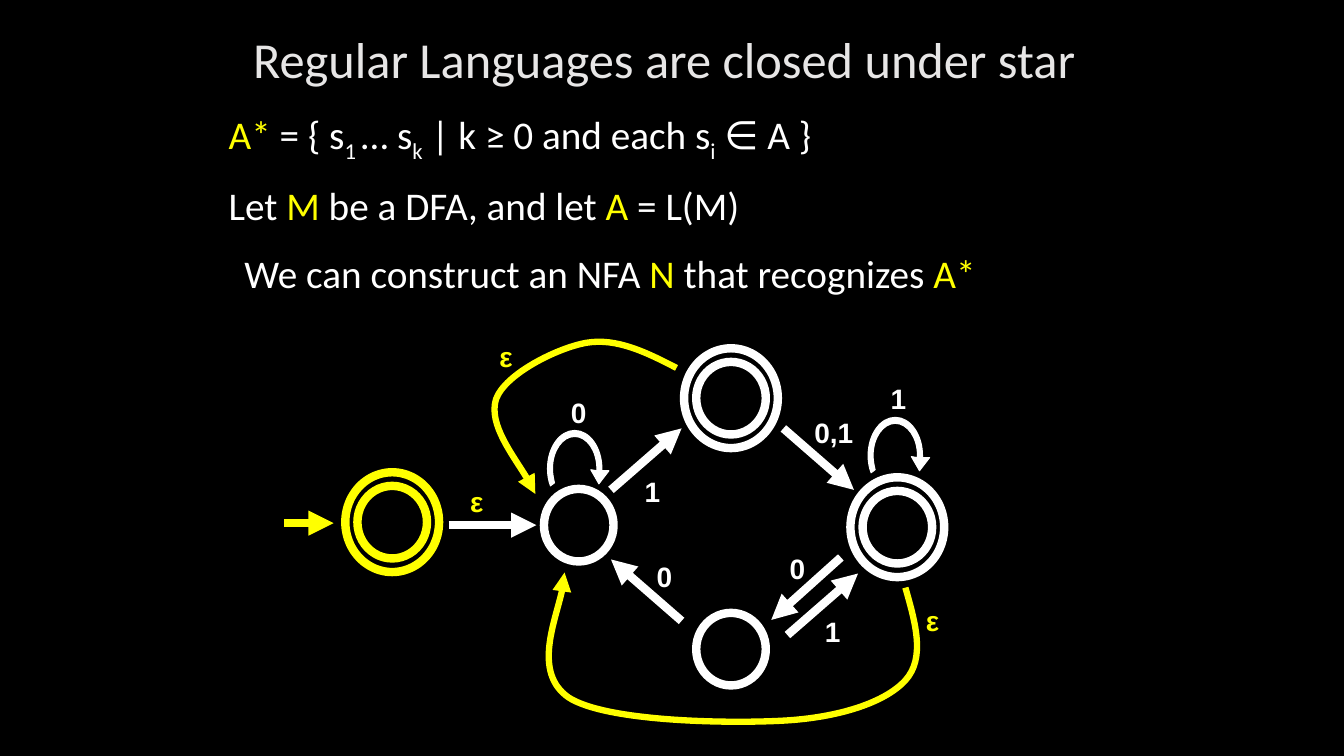
import pptx
import pptx.dml.color
import pptx.enum.shapes
import pptx.enum.text
import pptx.oxml
import pptx.oxml.ns
import pptx.util
from pptx.util import Inches

WHITE, YELLOW, TITLE_GRAY, BLACK = "FFFFFF", "FFFF00", "E7E6E6", "000000"
CENTER = pptx.enum.text.PP_ALIGN.CENTER
LEFT = pptx.enum.text.PP_ALIGN.LEFT


def rgb(color):
    return pptx.dml.color.RGBColor.from_string(color)


def drawing_element(tag, attributes=""):
    return pptx.oxml.parse_xml(
        f'<a:{tag} {pptx.oxml.ns.nsdecls("a")} {attributes}/>')


def style_line(shape, color, width, arrow=False):
    shape.line.color.rgb = rgb(color)
    shape.line.width = pptx.util.Pt(width)
    if arrow:
        shape.line._get_or_add_ln().append(
            drawing_element("tailEnd", 'type="triangle"'))


def add_text(slide, box, runs, size, font, align=LEFT, bold=False, wrap=True):
    """Runs are (text, color) or (text, color, baseline in percent)."""
    frame = slide.shapes.add_textbox(*map(Inches, box)).text_frame
    frame.word_wrap = wrap
    frame.auto_size = pptx.enum.text.MSO_AUTO_SIZE.SHAPE_TO_FIT_TEXT
    paragraph = frame.paragraphs[0]
    paragraph.alignment = align
    for text, color, *baseline in runs:
        run = paragraph.add_run()
        run.text = text
        run.font.size = pptx.util.Pt(size)
        run.font.name = font
        run.font.bold = bold
        run.font.color.rgb = rgb(color)
        if baseline:
            run.font._element.set("baseline", str(baseline[0] * 1000))


def add_edge(slide, start, end, color, arrow=True):
    edge = slide.shapes.add_connector(
        pptx.enum.shapes.MSO_CONNECTOR.STRAIGHT, *map(Inches, start + end))
    style_line(edge, color, 6, arrow)
    edge._element.spPr.append(drawing_element("effectLst"))


def add_ring(slide, center, width, height, color):
    x, y = center
    ring = slide.shapes.add_shape(
        pptx.enum.shapes.MSO_SHAPE.OVAL, Inches(x - width / 2),
        Inches(y - height / 2), Inches(width), Inches(height))
    ring.shadow.inherit = False
    ring.fill.background()
    style_line(ring, color, 6)


def add_state(slide, center, color, accepting):
    add_ring(slide, center, 0.69, 0.72, color)
    if accepting:
        add_ring(slide, center, 0.93, 0.99, color)


def add_outline(slide, left, top, start, segments, closed=False):
    """Each segment holds one point for a line, or three for a Bézier curve."""
    points = [start] + [point for segment in segments for point in segment]
    corners = [(Inches(left + x), Inches(top + y)) for x, y in points]
    builder = slide.shapes.build_freeform(*corners[0])
    builder.add_line_segments(corners[1:], close=closed)
    outline = builder.convert_to_shape()
    outline.shadow.inherit = False
    steps = iter(list(outline._element.iter(pptx.oxml.ns.qn("a:lnTo"))))
    for segment in segments:
        first, *others = [next(steps) for _ in segment]
        if others:
            curve = drawing_element("cubicBezTo")
            first.addprevious(curve)
            for step in (first, *others):
                curve.append(step[0])
                step.getparent().remove(step)
    return outline


def add_self_loop(slide, left, top):
    loop = add_outline(slide, left, top, (0.49, 0.4), [
        [(0.49, 0.39), (0.49, 0.38), (0.49, 0.38)],
        [(0.49, 0.2), (0.39, 0.06), (0.27, 0.06)],
        [(0.15, 0.06), (0.05, 0.2), (0.05, 0.38)],
        [(0.05, 0.43), (0.06, 0.48), (0.07, 0.52)],
        [(0.03, 0.55)],
        [(0.01, 0.5), (0, 0.44), (0, 0.38)],
        [(0, 0.17), (0.12, 0), (0.27, 0)],
        [(0.42, 0), (0.54, 0.17), (0.54, 0.38)],
        [(0.54, 0.38), (0.54, 0.39), (0.54, 0.4)],
        [(0.61, 0.4)], [(0.51, 0.53)], [(0.43, 0.39)], [(0.49, 0.4)],
    ], closed=True)
    loop.fill.solid()
    loop.fill.fore_color.rgb = rgb(WHITE)
    style_line(loop, WHITE, 0.75)


def add_epsilon_return(slide, left, top, start, segments):
    curve = add_outline(slide, left, top, start, segments)
    curve.fill.background()
    style_line(curve, YELLOW, 4.5, arrow=True)


def add_statements(slide, left, top, width):
    add_text(slide, (left, top, width, 0.71),
             [("Regular Languages are closed under star", TITLE_GRAY)],
             36, "Calibri", CENTER)
    add_text(slide, (left, top + 1.52, 7.71, 0.57), [
        ("Let ", WHITE), ("M", YELLOW), (" be a DFA, and let ", WHITE),
        ("A", YELLOW), (" = L(M)", WHITE)], 28, "Calibri")
    add_text(slide, (left + 0.11, top + 2.19, 7.54, 0.57), [
        ("We can construct an NFA ", WHITE), ("N", YELLOW),
        (" that recognizes ", WHITE), ("A*", YELLOW)],
        28, "Calibri", CENTER, wrap=False)
    add_text(slide, (left, top + 0.82, 8.9, 0.57), [
        ("A*", YELLOW), (" = { s", WHITE), ("1 ", WHITE, -25), ("… s", WHITE),
        ("k", WHITE, -25), (" | k ≥ 0 and each s", WHITE), ("i", WHITE, -25),
        (" ∈ A }", WHITE)], 28, "Calibri")


def add_automaton(slide, left, top):
    def place(x, y):
        return left + x, top + y

    for x, y, color, accepting in [
            (1.09, 1.88, YELLOW, True), (2.94, 1.91, WHITE, False),
            (4.45, 0.65, WHITE, True), (6.1, 1.93, WHITE, True),
            (4.45, 3.14, WHITE, False)]:
        add_state(slide, place(x, y), color, accepting)

    add_edge(slide, place(1.65, 1.91), place(2.05, 1.91), WHITE, arrow=False)
    for start, end, color in [
            ((0.02, 1.89), (0.51, 1.89), YELLOW),
            ((2.04, 1.91), (2.52, 1.91), WHITE),
            ((3.26, 1.56), (3.96, 0.95), WHITE),
            ((3.96, 2.86), (3.26, 2.25), WHITE),
            ((4.97, 0.95), (5.67, 1.56), WHITE),
            ((5.54, 2.23), (4.85, 2.85), WHITE),
            ((5.01, 3.0), (5.71, 2.39), WHITE)]:
        add_edge(slide, place(*start), place(*end), color)

    for loop_corner in [(2.63, 0.97), (5.81, 0.84)]:
        add_self_loop(slide, *place(*loop_corner))

    add_epsilon_return(slide, left, top, (3.91, 0.35), [
        [(3.62, 0.2), (3.32, 0.05), (3.02, 0.1)],
        [(2.73, 0.15), (2.21, 0.41), (2.12, 0.66)],
        [(2.04, 0.91), (2.45, 1.44), (2.51, 1.6)]])
    add_epsilon_return(slide, left, top, (6.18, 2.53), [
        [(6.28, 2.88), (6.38, 3.23), (6.18, 3.45)],
        [(5.98, 3.67), (5.52, 3.82), (4.97, 3.85)],
        [(4.41, 3.88), (3.21, 3.86), (2.84, 3.62)],
        [(2.48, 3.37), (2.81, 2.59), (2.8, 2.38)]])

    label_widths = {"0,1": 0.59, "ε": 0.33}
    for symbol, center_x, label_top in [
            ("0", 2.94, 0.57), ("0,1", 5.47, 0.77), ("0", 5.11, 2.12),
            ("0", 3.79, 2.2), ("1", 3.67, 1.36), ("1", 5.46, 2.75),
            ("1", 6.11, 0.44), ("ε", 1.93, 1.46), ("ε", 2.22, 0.02),
            ("ε", 6.45, 2.64)]:
        width = label_widths.get(symbol, 0.36)
        color = YELLOW if symbol == "ε" else WHITE
        add_text(slide, (*place(center_x - width / 2, label_top), width, 0.43),
                 [(symbol, color)], 20, "Arial", CENTER, bold=True, wrap=False)


def main():
    deck = pptx.Presentation()
    deck.slide_width, deck.slide_height = Inches(13.33), Inches(7.5)
    slide = deck.slides.add_slide(deck.slide_layouts[6])
    slide.background.fill.solid()
    slide.background.fill.fore_color.rgb = rgb(BLACK)
    add_statements(slide, 2.17, 0.23, 8.84)
    add_automaton(slide, 2.8, 3.3)
    deck.save("out.pptx")


if __name__ == "__main__":
    main()
